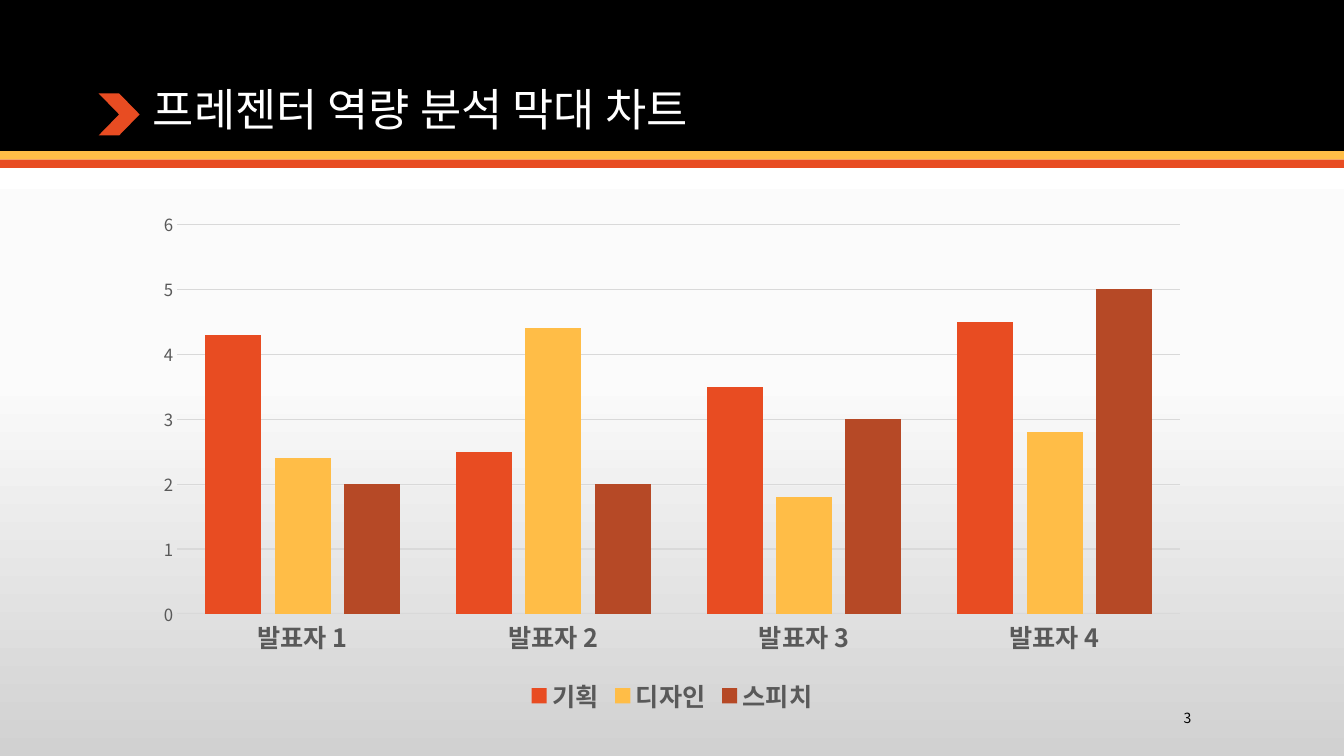
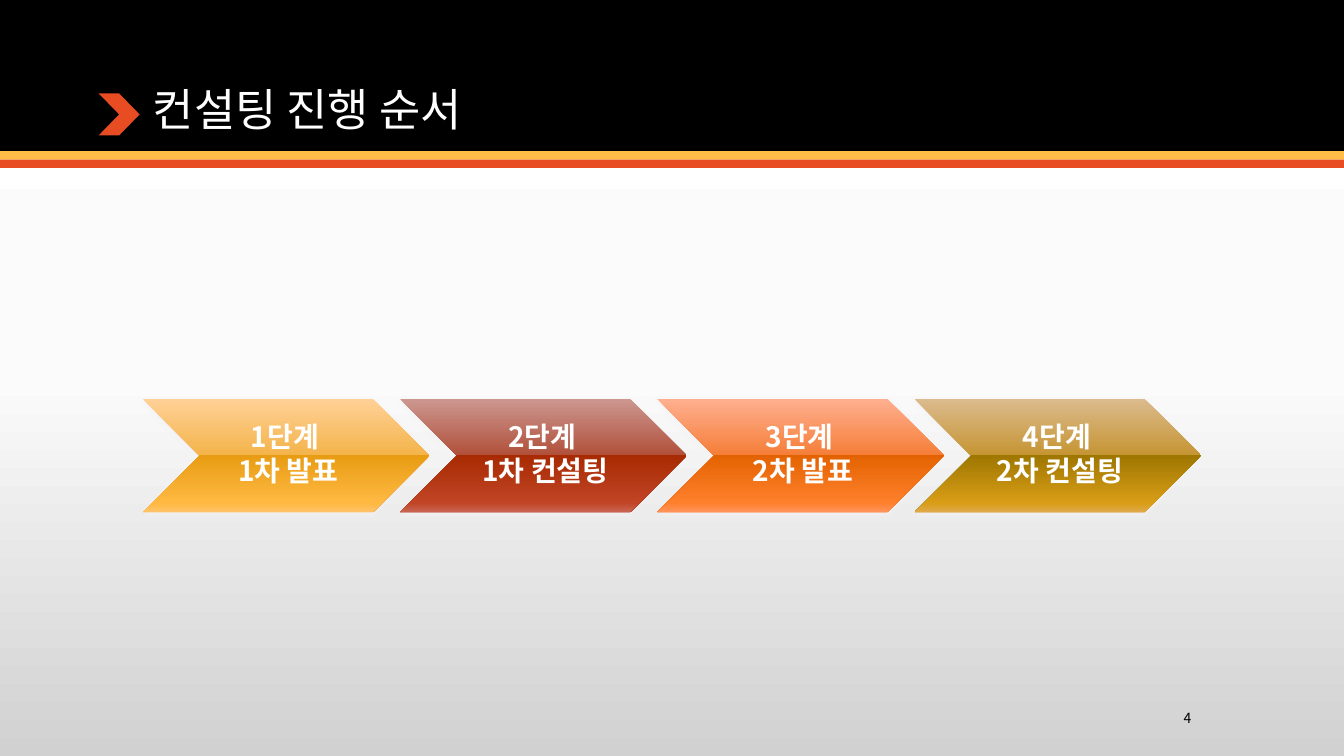
from pptx import Presentation
from pptx.chart.data import CategoryChartData as ChartData
from pptx.dml.color import RGBColor as RGB
from pptx.enum.chart import XL_CHART_TYPE as CHART, XL_LEGEND_POSITION as LEGEND
from pptx.enum.chart import XL_TICK_MARK as TICK
from pptx.enum.shapes import MSO_SHAPE as SHAPE
from pptx.enum.text import MSO_ANCHOR as ANCHOR, MSO_AUTO_SIZE as FIT, PP_ALIGN as ALIGN
from pptx.oxml import parse_xml
from pptx.oxml.ns import nsdecls, qn
from pptx.util import Emu, Pt

FONT = "Noto Sans CJK KR"
BLACK = RGB(0x00, 0x00, 0x00)
WHITE = RGB(0xFF, 0xFF, 0xFF)
RED = RGB(0xE8, 0x4C, 0x22)
GOLD = RGB(0xFF, 0xBD, 0x47)
RUST = RGB(0xB6, 0x49, 0x26)
GRAY = RGB(0x59, 0x59, 0x59)
RULE = RGB(0xD9, 0xD9, 0xD9)
GLOW = RGB(0xF4, 0xF4, 0xF4)

# Content column, shared by title, chart and steps
LEFT, WIDE = 136, 1008

BACK = [(0, "FFFFFF"), (50, "FBFBFB"), (100, "D1D1D1")]
STOPS = (0, 49, 49, 92, 100)
STEPS = [
    ("1차 발표", ("FFD197", "F4B44C", "E89C13", "FFB942", "FFC36A")),
    ("1차 컨설팅", ("CC9790", "B1513C", "A82A02", "C14526", "C96654")),
    ("2차 발표", ("FFAF90", "F57F39", "E36200", "FF802C", "FF945E")),
    ("2차 컨설팅", ("DBBB8E", "C69534", "9D7600", "D99D17", "DFA94C")),
]
SCORES = [
    ("기획", (4.3, 2.5, 3.5, 4.5), RED),
    ("디자인", (2.4, 4.4, 1.8, 2.8), GOLD),
    ("스피치", (2, 2, 3, 5), RUST),
]


def px(*nums):
    return [Emu(num * 9525) for num in nums]


def style(font, size, color, bold=False):
    font.name, font.size, font.bold = FONT, Pt(size), bold
    font.color.rgb = color


def asian(root):
    """Use the same typeface for Hangul as for Latin text."""
    for latin in list(root.iter(qn("a:latin"))):
        latin.addnext(parse_xml(f'<a:ea {nsdecls("a")} typeface="{FONT}"/>'))


def blend(fill, root, stops):
    """Turn a fill into a vertical gradient."""
    fill.solid()
    old = next(root.iter(qn("a:solidFill")))
    marks = "".join(
        f'<a:gs pos="{pos * 1000}"><a:srgbClr val="{tone}"/></a:gs>' for pos, tone in stops)
    new = parse_xml(
        f'<a:gradFill {nsdecls("a")} rotWithShape="1"><a:gsLst>{marks}</a:gsLst>'
        '<a:lin ang="5400000" scaled="0"/></a:gradFill>')
    old.getparent().replace(old, new)


def block(slide, kind, box, color=None):
    shape = slide.shapes.add_shape(kind, *px(*box))
    shape.shadow.inherit = False
    if color is not None:
        shape.fill.solid()
        shape.fill.fore_color.rgb = color
    shape.line.fill.background()
    return shape


def dress(layout, slide):
    """Give the layout its background, bands, marker and title place."""
    blend(layout.background.fill, layout.element, BACK)
    parts = [
        (SHAPE.RECTANGLE, (0, 0, 1280, 144), BLACK),
        (SHAPE.RECTANGLE, (0, 144, 1280, 8), GOLD),
        (SHAPE.RECTANGLE, (0, 152, 1280, 8), RED),
        (SHAPE.CHEVRON, (94, 89, 39, 40), RED),
    ]
    for i, part in enumerate(parts):
        item = block(slide, *part).element
        item.nvSpPr.cNvPr.id = 20 + i
        layout.shapes.element.insert(2 + i, item)
    name = layout.placeholders[0]
    name.left, name.top, name.width, name.height = px(LEFT, 27, WIDE, 108)


def head(slide, text):
    frame = slide.shapes.title.text_frame
    frame.text = text
    frame.vertical_anchor = ANCHOR.BOTTOM
    frame.auto_size = FIT.NONE
    para = frame.paragraphs[0]
    para.alignment, para.line_spacing = ALIGN.LEFT, 0.9
    style(para.runs[0].font, 32, WHITE)


def number(slide, num):
    frame = slide.shapes.add_textbox(*px(1000, 669, 144, 29)).text_frame
    frame.word_wrap = True
    frame.vertical_anchor = ANCHOR.MIDDLE
    frame.text = str(num)
    para = frame.paragraphs[0]
    para.alignment = ALIGN.RIGHT
    style(para.runs[0].font, 10, BLACK)


def bars(slide):
    data = ChartData()
    data.categories = [f"발표자 {i}" for i in range(1, 5)]
    for name, vals, _ in SCORES:
        data.add_series(name, vals)
    chart = slide.shapes.add_chart(
        CHART.COLUMN_CLUSTERED, *px(LEFT, 192, WIDE, 493), data).chart
    chart.has_title = False
    style(chart.font, 10, BLACK)

    # Columns
    plot = chart.plots[0]
    plot.gap_width, plot.overlap, plot.vary_by_categories = 100, -24, False
    for row, (_, _, color) in zip(plot.series, SCORES):
        row.format.fill.solid()
        row.format.fill.fore_color.rgb = color

    # Axes
    cat, val = chart.category_axis, chart.value_axis
    for axis in (cat, val):
        axis.major_tick_mark = axis.minor_tick_mark = TICK.NONE
    style(cat.tick_labels.font, 18, GRAY, True)
    style(val.tick_labels.font, 12, GRAY)
    val.minimum_scale, val.maximum_scale, val.major_unit = 0, 6, 1
    val.format.line.fill.background()
    for line in (cat.format.line, val.major_gridlines.format.line):
        line.color.rgb, line.width = RULE, Pt(0.75)

    # Legend
    chart.has_legend = True
    chart.legend.position = LEGEND.BOTTOM
    chart.legend.include_in_layout = False
    style(chart.legend.font, 18, GRAY, True)
    asian(chart.element if hasattr(chart, "element") else chart._chartSpace)


def step(slide, i, text, tones):
    wide, high = 273, 108
    pitch = (WIDE - wide) // (len(STEPS) - 1)
    shape = block(slide, SHAPE.CHEVRON, (LEFT + i * pitch, 380, wide, high))
    props = shape.element.spPr
    blend(shape.fill, props, zip(STOPS, tones))
    props.find(qn("a:effectLst")).append(parse_xml(
        f'<a:outerShdw {nsdecls("a")} blurRad="39000" dist="25400" dir="5400000" '
        f'rotWithShape="0"><a:srgbClr val="{GLOW}"><a:alpha val="83000"/>'
        '</a:srgbClr></a:outerShdw>'))

    # Label
    frame = shape.text_frame
    frame.word_wrap = True
    frame.vertical_anchor = ANCHOR.MIDDLE
    (frame.margin_left, frame.margin_top,
     frame.margin_right, frame.margin_bottom) = px(8, 3, 4, 3)
    frame.text = f"{i + 1}단계 \n{text}"
    for para in frame.paragraphs:
        para.alignment, para.line_spacing = ALIGN.CENTER, 0.9
        para.space_after = Pt(2.5)
        style(para.runs[0].font, 20, WHITE, True)


def steps(slide):
    for i, (text, tones) in enumerate(STEPS):
        step(slide, i, text, tones)


def main():
    prs = Presentation()
    prs.slide_width, prs.slide_height = px(1280, 720)
    layout = prs.slide_layouts[5]
    pages = [("프레젠터 역량 분석 막대 차트", bars), ("컨설팅 진행 순서", steps)]
    for num, (text, draw) in enumerate(pages, 3):
        slide = prs.slides.add_slide(layout)
        if num == 3:
            dress(layout, slide)
        head(slide, text)
        draw(slide)
        number(slide, num)
        asian(slide.element)
    prs.save("out.pptx")


if __name__ == "__main__":
    main()
